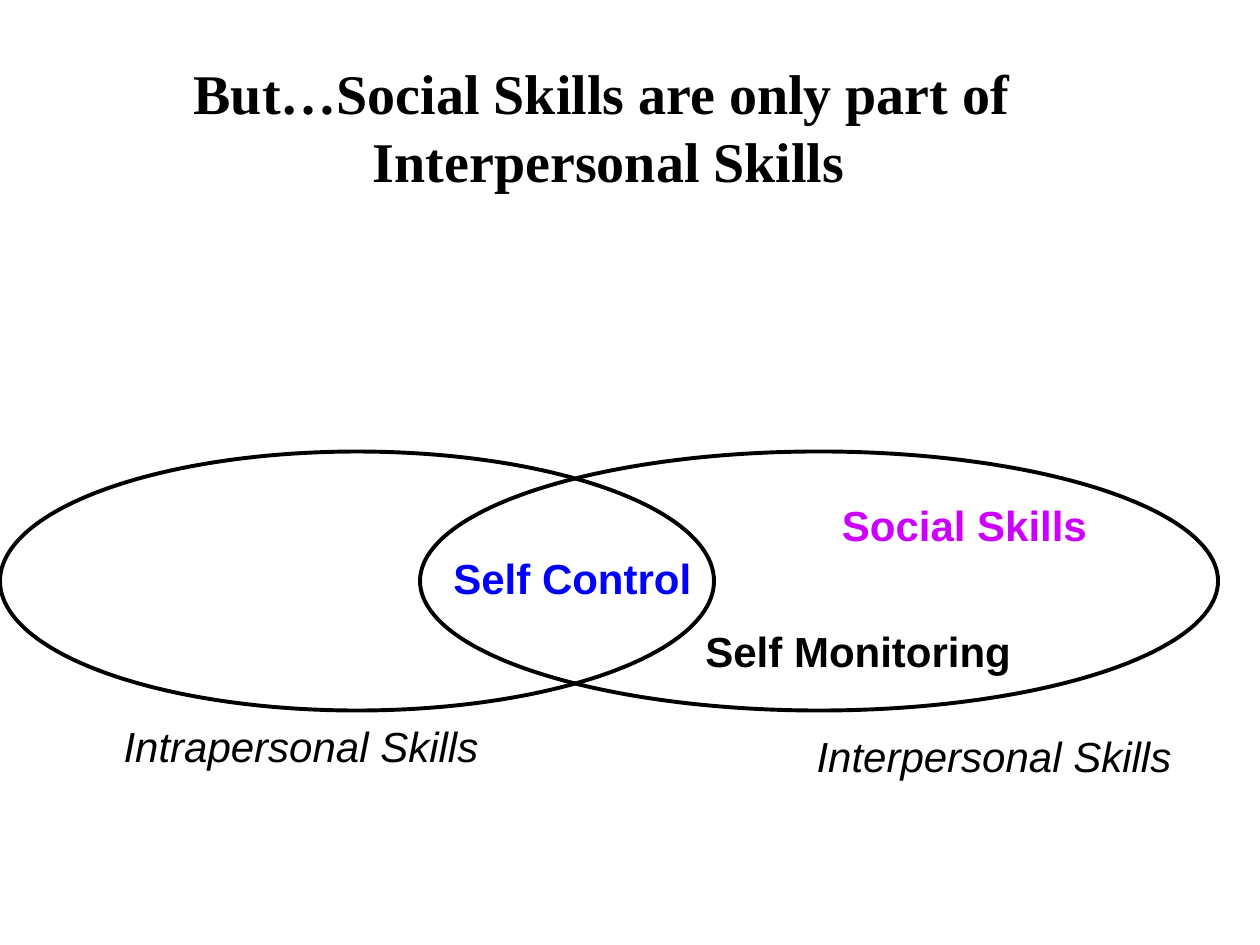
from pptx import Presentation
from pptx import util as u
from pptx.dml.color import RGBColor
from pptx.enum import shapes, text

Pt = u.Pt
COLORS = {"black": "000000", "blue": "0000FF", "magenta": "CC00FF"}


def style(p, size, font, color="black", bold=False, italic=False, align=None):
    """Format every run of a paragraph."""
    p.alignment = align
    for r in p.runs:
        f = r.font
        f.size, f.name, f.bold, f.italic = Pt(size), font, bold, italic
        f.color.rgb = RGBColor.from_string(COLORS[color])


def add_title(s, box, wording):
    """Place the slide title in the given box."""
    sp = s.shapes.title
    sp.left, sp.top, sp.width, sp.height = map(Pt, box)
    tf = sp.text_frame
    tf.word_wrap = True
    tf.auto_size = text.MSO_AUTO_SIZE.NONE
    tf.vertical_anchor = text.MSO_ANCHOR.MIDDLE
    tf.text = wording
    style(tf.paragraphs[0], 32, "Times New Roman", bold=True,
          align=text.PP_ALIGN.CENTER)


def add_ellipse(s, x, y, w, h):
    """Draw one unfilled set of the Venn diagram."""
    sp = s.shapes.add_shape(shapes.MSO_SHAPE.OVAL, Pt(x), Pt(y), Pt(w), Pt(h))
    sp.shadow.inherit = False
    sp.fill.background()
    sp.line.color.rgb = RGBColor.from_string(COLORS["black"])
    sp.line.width = Pt(2.25)


def add_label(s, x, y, w, wording, **look):
    """Place a one-line label."""
    tf = s.shapes.add_textbox(Pt(x), Pt(y), Pt(w), Pt(36)).text_frame
    tf.word_wrap = True
    tf.auto_size = text.MSO_AUTO_SIZE.SHAPE_TO_FIT_TEXT
    tf.text = wording
    style(tf.paragraphs[0], 24, "Arial", **look)


def add_venn(s, box):
    """Draw two overlapping skill sets with captions and members."""
    x, y, w, h = box
    overlap_x = 240
    add_ellipse(s, x, y, 408, h)
    add_ellipse(s, x + overlap_x, y, w - overlap_x, h)

    captions = [(42, 150, "Intrapersonal Skills"),
                (438, 156, "Interpersonal Skills")]
    for dx, dy, wording in captions:
        add_label(s, x + dx, y + dy, 260, wording, italic=True,
                  align=text.PP_ALIGN.CENTER)

    members = [(474, 24, 168, "Social Skills", "magenta"),
               (396, 96, 276, "Self Monitoring", "black"),
               (252, 54, 246, "Self Control", "blue")]
    for dx, dy, width, wording, color in members:
        add_label(s, x + dx, y + dy, width, wording, color=color, bold=True,
                  align=text.PP_ALIGN.LEFT)


def main():
    """Build and save the slide."""
    prs = Presentation()
    prs.slide_width, prs.slide_height = Pt(720), Pt(540)
    s = prs.slides.add_slide(prs.slide_layouts[5])
    add_title(s, (0, 36, 696, 72),
              "But…Social Skills are only part of \vInterpersonal Skills")
    add_venn(s, (0, 258, 696, 148))
    prs.save("out.pptx")


if __name__ == "__main__":
    main()
